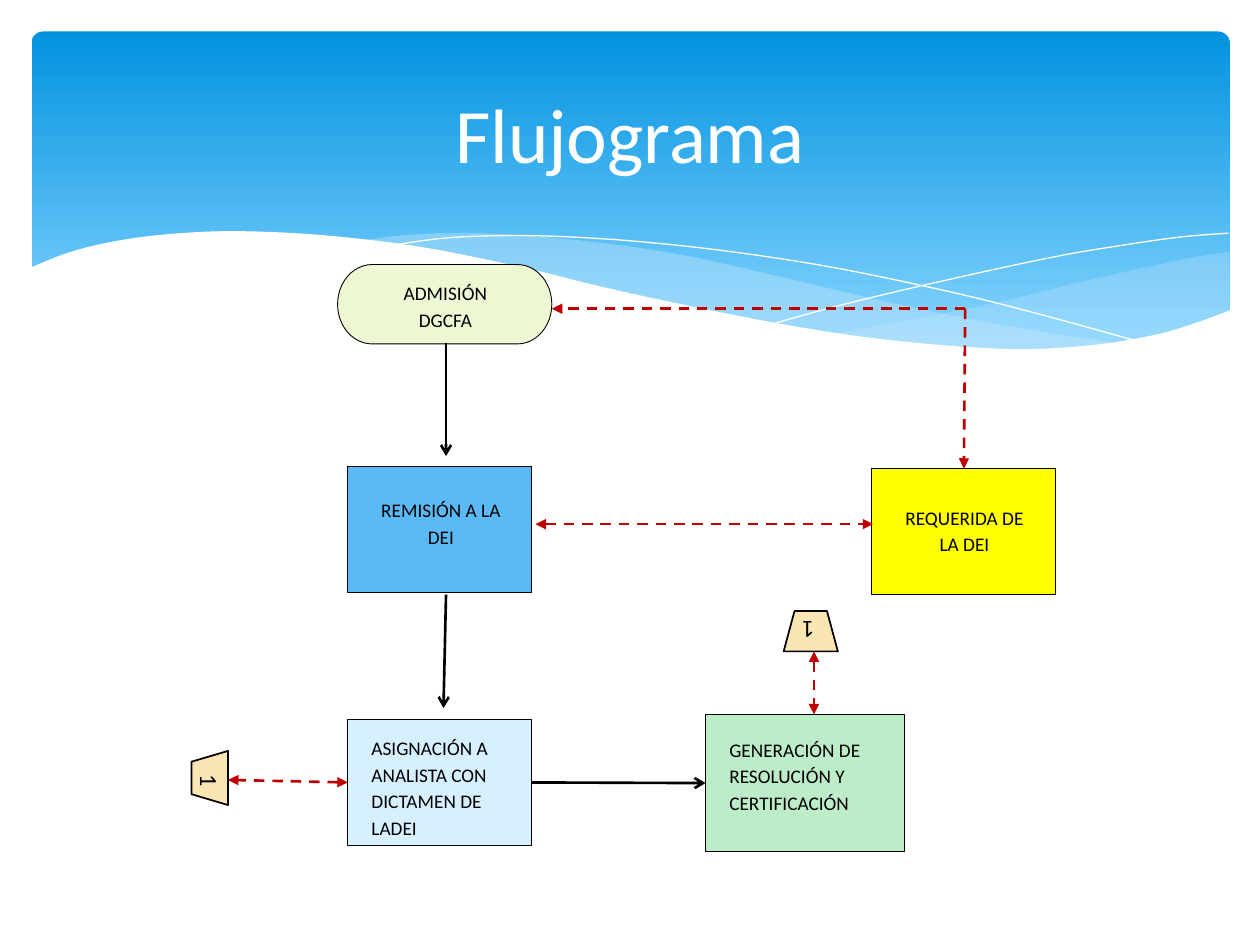
import pptx
import pptx.util
import pptx.dml.color
import pptx.enum.dml
import pptx.enum.shapes
import pptx.enum.text
import pptx.oxml
import pptx.oxml.ns

Inches, Pt = pptx.util.Inches, pptx.util.Pt
RGB = pptx.dml.color.RGBColor
SHAPE = pptx.enum.shapes.MSO_SHAPE
ALIGN = pptx.enum.text.PP_ALIGN
MIDDLE = pptx.enum.text.MSO_ANCHOR.MIDDLE

BLACK, WHITE, RED = RGB(0, 0, 0), RGB(255, 255, 255), RGB(0xC0, 0, 0)
DEEP, LIGHT, MIST = RGB(0x02, 0x93, 0xE0), RGB(0x83, 0xD3, 0xFE), RGB(0xC6, 0xE7, 0xFC)
LIME, BLUE, YELLOW = RGB(0xED, 0xF7, 0xD3), RGB(0x5B, 0xBA, 0xF6), RGB(255, 255, 0)
ICE, GREEN, SAND = RGB(0xD6, 0xF0, 0xFF), RGB(0xBD, 0xEC, 0xC9), RGB(0xFB, 0xE6, 0xB3)
FONT = "Calibri"

FAR = ([(6.38, .81), (7.3, .64), (7.82, .53), (8.38, .39), (8.83, .29), (9.25, .2), (9.53, .16)],
       [(9.53, .63), (9.19, .75), (8.82, .85), (8.4, .91), (7.91, .94), (7.46, .93),
        (6.96, .88), (6.38, .81)])
NEAR = ([(2.63, .07), (3.05, .02), (3.57, .01), (4.19, .05), (4.79, .12), (5.32, .21),
         (6.06, .38), (6.83, .56), (7.52, .7), (8.14, .81), (8.7, .89)],
        [(8.7, .89), (8.25, .93), (7.73, .94), (7.13, .9), (6.42, .82), (5.61, .68),
         (5.07, .56), (4.26, .38), (3.6, .23), (3.19, .15), (2.63, .07)])
FALL = [(2.86, .11), (3.3, .05), (3.78, .03), (4.27, .04), (4.87, .08), (5.59, .16),
        (6.42, .29), (7.37, .49), (8.08, .67), (8.84, .88)]
RISE = [(5.9, .73), (6.49, .57), (7.25, .39), (8.13, .2), (8.72, .1), (9.15, .04), (9.52, .01)]
FRONT = ([(0, .29), (.36, .15), (.83, .05), (1.38, 0), (1.88, 0), (2.48, .04), (3.17, .13),
          (3.95, .29), (4.52, .43), (5.06, .55), (5.8, .7), (6.45, .81), (7.03, .88),
          (7.55, .92), (8, .93), (8.52, .89), (8.97, .81), (9.27, .72), (9.54, .62)],
         [(9.54, 1.45), (0, 1.45)])


def smooth(knots, steps=6):
    """Return a Catmull-Rom curve through the knots."""
    ends = [knots[0], *knots, knots[-1]]
    curve = [knots[0]]
    for a, b, c, d in zip(ends, ends[1:], ends[2:], ends[3:]):
        for step in range(1, steps + 1):
            t = step / steps
            curve.append(tuple(
                (2 * q + (r - p) * t + (2 * p - 5 * q + 4 * r - s) * t ** 2
                 + (3 * q - p - 3 * r + s) * t ** 3) / 2
                for p, q, r, s in zip(a, b, c, d)))
    return curve


def trace(slide, box, edges, close):
    """Draw smooth edges, placed from the corner of the box."""
    dots = [(Inches(box[0] + x), Inches(box[1] + y))
            for edge in edges for x, y in (smooth(edge) if len(edge) > 2 else edge)]
    pen = slide.shapes.build_freeform(*dots[0])
    pen.add_line_segments(dots[1:], close=close)
    shape = pen.convert_to_shape()
    shape.shadow.inherit = False
    return shape


def wave(slide, box, edges, color, alpha=100):
    """Draw a filled wave, clear to the given share."""
    shape = trace(slide, box, edges, True)
    shape.fill.solid()
    shape.fill.fore_color.rgb = color
    shape.line.fill.background()
    if alpha < 100:
        tint = shape._element.spPr.find(".//" + pptx.oxml.ns.qn("a:srgbClr"))
        tint.append(pptx.oxml.parse_xml(
            f'<a:alpha {pptx.oxml.ns.nsdecls("a")} val="{alpha * 1000}"/>'))


def band(slide, box):
    """Draw the blue band with its waves along the bottom."""
    left, top, width, height = box
    panel = slide.shapes.add_shape(SHAPE.ROUNDED_RECTANGLE, *map(Inches, box))
    panel.adjustments[0] = 0.034
    panel.shadow.inherit = False
    panel.line.fill.background()
    panel.fill.gradient()
    panel.fill.gradient_angle = 270
    for stop, color, place in zip(panel.fill.gradient_stops, (DEEP, LIGHT), (0, 0.9)):
        stop.color.rgb = color
        stop.position = place
    base = (left - 0.02, top + 1.59, width + 0.03, height - 1.25)
    wave(slide, base, FAR, MIST, 29)
    wave(slide, base, NEAR, MIST, 40)
    for knots in (FALL, RISE):
        thread = trace(slide, base, [knots], False)
        thread.fill.background()
        thread.line.color.rgb = WHITE
        thread.line.width = Pt(0)
    wave(slide, base, FRONT, WHITE)


def write(shape, text, size, color, align):
    """Set the text of a shape and format it."""
    shape.text_frame.text = text
    para = shape.text_frame.paragraphs[0]
    para.alignment = align
    font = para.runs[0].font
    font.name, font.size, font.color.rgb = FONT, Pt(size), color
    return para


def head(slide, box):
    """Place the title in front of the band."""
    title = slide.shapes.title
    title.left, title.top, title.width, title.height = map(Inches, box)
    write(title, "Flujograma", 44, WHITE, ALIGN.CENTER)
    title.text_frame.vertical_anchor = MIDDLE
    slide.shapes._spTree.append(title._element)


def node(slide, kind, box, color, weight=0.5):
    """Draw a filled shape with a black outline."""
    shape = slide.shapes.add_shape(kind, *map(Inches, box))
    shape.shadow.inherit = False
    shape.fill.solid()
    shape.fill.fore_color.rgb = color
    shape.line.color.rgb = BLACK
    shape.line.width = Pt(weight)
    return shape


def label(slide, box, text, align):
    """Place the wording of a step."""
    frame = slide.shapes.add_textbox(*map(Inches, box))
    frame.text_frame.word_wrap = True
    para = write(frame, text, 11, BLACK, align)
    para.line_spacing = 1.15
    para.space_after = Pt(10)


def arrow(slide, start, end, dashed=False, double=False):
    """Draw a solid black or dashed red arrow."""
    line = slide.shapes.add_connector(
        pptx.enum.shapes.MSO_CONNECTOR.STRAIGHT, *map(Inches, (*start, *end)))
    line.line.color.rgb = RED if dashed else BLACK
    line.line.width = Pt(1.5)
    if dashed:
        line.line.dash_style = pptx.enum.dml.MSO_LINE.DASH
    space = pptx.oxml.ns.nsdecls("a")
    props = line._element.spPr
    for tip in ("headEnd", "tailEnd") if double else ("tailEnd",):
        props.get_or_add_ln().append(pptx.oxml.parse_xml(
            f'<a:{tip} {space} type="{"triangle" if dashed else "arrow"}"/>'))
    props.append(pptx.oxml.parse_xml(f"<a:effectLst {space}/>"))
    return line


def flow(slide, box):
    """Draw the steps, their links and the two page marks."""
    left, top = box[:2]

    def at(x, y, *size):
        return (left + x, top + y, *size)

    mid, low = ALIGN.CENTER, ALIGN.LEFT
    steps = [
        (SHAPE.FLOWCHART_TERMINATOR, (1.23, 0, 1.7, 0.63), LIME,
         (1.54, 0.06, 1.09, 0.52), "ADMISIÓN DGCFA", mid),
        (SHAPE.RECTANGLE, (1.31, 1.6, 1.46, 1), BLUE,
         (1.42, 1.78, 1.26, 0.73), "REMISIÓN A LA DEI", mid),
        (SHAPE.RECTANGLE, (5.47, 1.62, 1.46, 1), YELLOW,
         (5.59, 1.84, 1.23, 0.52), "REQUERIDA DE LA DEI", mid),
        (SHAPE.RECTANGLE, (1.31, 3.61, 1.46, 1), ICE,
         (1.4, 3.67, 1.43, 0.79), "ASIGNACIÓN A ANALISTA CON DICTAMEN DE LADEI", low),
        (SHAPE.RECTANGLE, (4.15, 3.57, 1.58, 1.09), GREEN,
         (4.24, 3.68, 1.4, 0.96), "GENERACIÓN DE RESOLUCIÓN Y CERTIFICACIÓN", low),
    ]
    nodes = []
    for kind, place, color, area, text, align in steps:
        nodes.append(node(slide, kind, at(*place), color))
        label(slide, at(*area), text, align)
    ask, task, result = nodes[2:]

    for place, turn in (((4.77, 2.75, 0.43, 0.32), 0), ((0, 3.93, 0.43, 0.29), 90)):
        mark = node(slide, SHAPE.FLOWCHART_MANUAL_OPERATION, at(*place), SAND, 1)
        write(mark, "1", 14, BLACK, mid)
        mark.text_frame.vertical_anchor = MIDDLE
        mark.rotation = turn
        if not turn:
            mark._element.spPr.xfrm.set("flipV", "1")

    arrow(slide, at(2.09, 0.62), at(2.09, 1.52))
    arrow(slide, at(2.09, 2.62), at(2.07, 3.52))
    link = arrow(slide, at(2.77, 4.11), at(4.15, 4.11))
    link.begin_connect(task, 3)
    link.end_connect(result, 1)
    arrow(slide, at(6.21, 0.35), at(6.2, 1.62), True).end_connect(ask, 0)
    arrow(slide, at(6.21, 0.35), at(2.93, 0.35), True)
    arrow(slide, at(2.8, 2.06), at(5.48, 2.06), True, True)
    arrow(slide, at(5.01, 3.07), at(5.01, 3.57), True, True)
    arrow(slide, at(1.31, 4.11), at(0.36, 4.09), True, True).begin_connect(task, 1)


def main():
    """Build the slide and save it."""
    deck = pptx.Presentation()
    deck.slide_width, deck.slide_height = Inches(10), Inches(7.5)
    slide = deck.slides.add_slide(deck.slide_layouts[5])
    band(slide, (0.25, 0.25, 9.51, 2.7))
    head(slide, (0.5, 0.37, 9, 1.37))
    flow(slide, (1.45, 2.1, 6.93, 4.66))
    deck.save("out.pptx")


if __name__ == "__main__":
    main()
